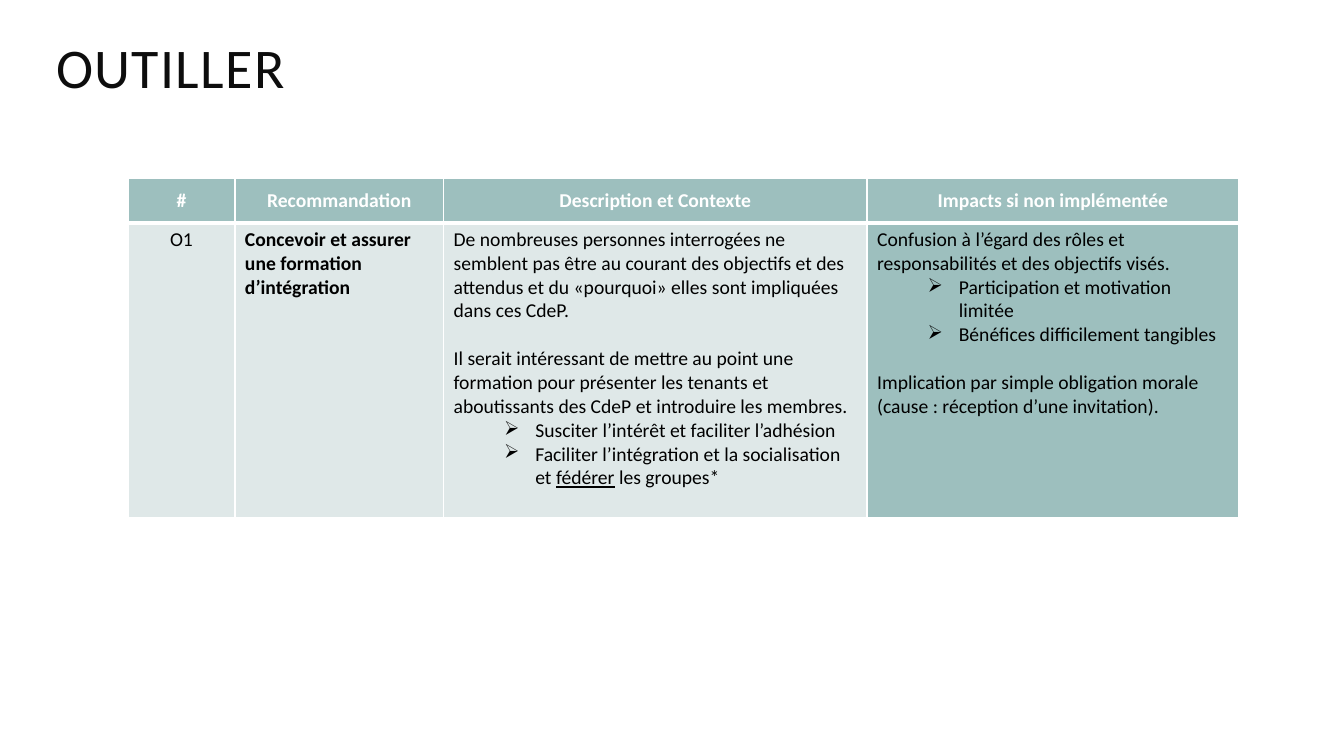
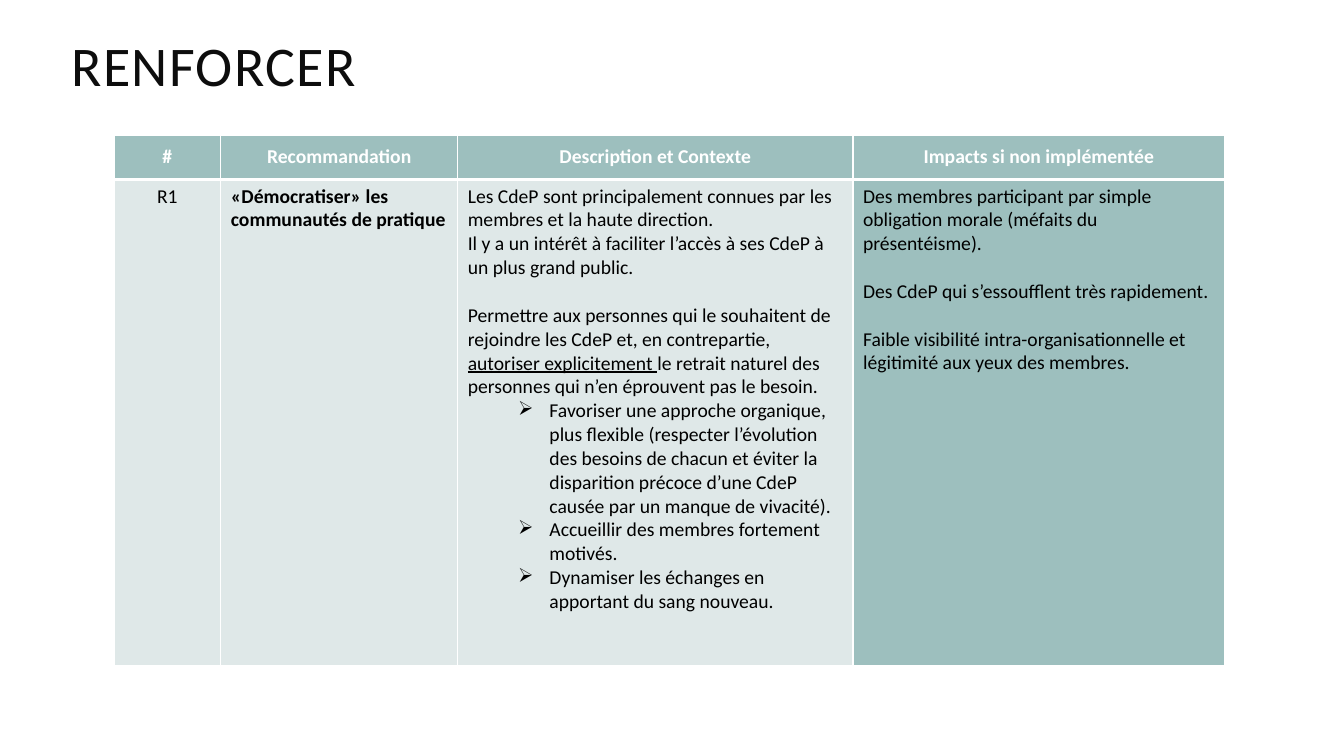
from dataclasses import dataclass

from lxml import etree
from pptx import Presentation
from pptx import util as u
from pptx.dml.color import RGBColor
from pptx.enum import text
from pptx.oxml import ns


@dataclass(frozen=True)
class Theme:
    font: str = "Calibri"
    title_size: int = 40
    body_size: int = 14
    gap: int = 17
    title: str = "0D0D0D"
    body: str = "000000"
    light: str = "FFFFFF"
    accent: str = "9DBFBE"
    tint: str = "DFE8E8"


@dataclass(frozen=True)
class Para:
    """Paragraph text; words between underscores are underlined."""
    text: str
    bullet: bool = False
    gap: bool = False


HEADERS = ("#", "Recommandation", "Description et Contexte",
           "Impacts si non implémentée")
HEADER_HEIGHT = 0.44
THIN, THICK = 1, 3


class Deck:
    def __init__(self, theme):
        self.theme = theme
        self.prs = Presentation()
        self.prs.slide_width = u.Inches(13.33)
        self.prs.slide_height = u.Inches(7.5)
        self.s = None

    def add_slide(self):
        self.s = self.prs.slides.add_slide(self.prs.slide_layouts[6])

    def run(self, p, content, color, **formats):
        r = p.add_run()
        r.text = content
        formats = {"name": self.theme.font,
                   "size": u.Pt(self.theme.body_size), **formats}
        for name, value in formats.items():
            setattr(r.font, name, value)
        r.font.color.rgb = RGBColor.from_string(color)
        return r

    def title(self, content, left, height):
        sp = self.s.shapes.add_textbox(u.Inches(left), 0, u.Inches(10.63),
                                       u.Inches(height))
        tf = sp.text_frame
        tf.word_wrap = True
        tf.vertical_anchor = text.MSO_ANCHOR.MIDDLE
        p = tf.paragraphs[0]
        p.line_spacing = 0.8
        r = self.run(p, content, self.theme.title,
                     size=u.Pt(self.theme.title_size))
        r.font._element.set("spc", "100")

    def bullet(self, p):
        pPr = p._p.get_or_add_pPr()
        pPr.set("marL", str(u.Inches(0.81)))
        pPr.set("indent", str(u.Inches(-0.31)))
        etree.SubElement(pPr, ns.qn("a:buChar"), char="➢")

    def borders(self, cell, top, bottom):
        tcPr = cell._tc.get_or_add_tcPr()
        widths = {"L": THIN, "R": THIN, "T": top, "B": bottom}
        for side, width in widths.items():
            ln = etree.SubElement(tcPr, ns.qn(f"a:ln{side}"),
                                  w=str(u.Pt(width)))
            fill = etree.SubElement(ln, ns.qn("a:solidFill"))
            etree.SubElement(fill, ns.qn("a:srgbClr"), val=self.theme.light)

    def cell(self, cell, paras, fill, color, top=THIN, bottom=THIN,
             bold=False, centered=False):
        self.borders(cell, top, bottom)
        cell.fill.solid()
        cell.fill.fore_color.rgb = RGBColor.from_string(fill)
        tf = cell.text_frame
        for i, para in enumerate(paras):
            p = tf.paragraphs[0] if i == 0 else tf.add_paragraph()
            if centered:
                p.alignment = text.PP_ALIGN.CENTER
            if para.gap:
                p.space_before = u.Pt(self.theme.gap)
            if para.bullet:
                self.bullet(p)
            for j, part in enumerate(para.text.split("_")):
                if part:
                    self.run(p, part, color, bold=bold, underline=j % 2 == 1)

    def table(self, left, top, widths, body_height, number, name,
              description, impacts):
        th = self.theme
        frame = self.s.shapes.add_table(
            2, len(HEADERS), u.Inches(left), u.Inches(top),
            u.Inches(sum(widths)), u.Inches(HEADER_HEIGHT + body_height))
        table = frame.table
        table.horz_banding = False
        for row, height in zip(table.rows, (HEADER_HEIGHT, body_height)):
            row.height = u.Inches(height)
        body = ([Para(number)], [Para(name)], description, impacts)
        for i, (width, header, paras) in enumerate(zip(widths, HEADERS, body)):
            table.columns[i].width = u.Inches(width)
            head = table.cell(0, i)
            head.vertical_anchor = text.MSO_ANCHOR.MIDDLE
            self.cell(head, [Para(header)], th.accent, th.light,
                      bottom=THICK, bold=True, centered=True)
            self.cell(table.cell(1, i), paras,
                      th.accent if i == len(HEADERS) - 1 else th.tint,
                      th.body, top=THICK, bold=i == 1, centered=i == 0)


def main():
    deck = Deck(Theme())

    deck.add_slide()
    deck.table(
        1.27, 1.77, (1.06, 2.07, 4.2, 3.69), 2.93, "O1",
        "Concevoir et assurer une formation d’intégration",
        [Para("De nombreuses personnes interrogées ne semblent pas être au "
              "courant des objectifs et des attendus et du «pourquoi» elles "
              "sont impliquées dans ces CdeP."),
         Para("Il serait intéressant de mettre au point une formation pour "
              "présenter les tenants et aboutissants des CdeP et introduire "
              "les membres.", gap=True),
         Para("Susciter l’intérêt et faciliter l’adhésion", bullet=True),
         Para("Faciliter l’intégration et la socialisation et _fédérer_ les "
              "groupes*", bullet=True)],
        [Para("Confusion à l’égard des rôles et responsabilités et des "
              "objectifs visés."),
         Para("Participation et motivation limitée", bullet=True),
         Para("Bénéfices difficilement tangibles", bullet=True),
         Para("Implication par simple obligation morale (cause : réception "
              "d’une invitation).", gap=True)])
    deck.title("OUTILLER", 0.46, 1.44)

    deck.add_slide()
    deck.table(
        1.13, 1.34, (1.06, 2.35, 3.92, 3.69), 4.82, "R1",
        "«Démocratiser» les communautés de pratique",
        [Para("Les CdeP sont principalement connues par les membres et la "
              "haute direction."),
         Para("Il y a un intérêt à faciliter l’accès à ses CdeP à un plus "
              "grand public."),
         Para("Permettre aux personnes qui le souhaitent de rejoindre les "
              "CdeP et, en contrepartie, _autoriser explicitement _le retrait "
              "naturel des personnes qui n’en éprouvent pas le besoin.",
              gap=True),
         Para("Favoriser une approche organique, plus flexible (respecter "
              "l’évolution des besoins de chacun et éviter la disparition "
              "précoce d’une CdeP causée par un manque de vivacité).",
              bullet=True),
         Para("Accueillir des membres fortement motivés.", bullet=True),
         Para("Dynamiser les échanges en apportant du sang nouveau.",
              bullet=True)],
        [Para("Des membres participant par simple obligation morale (méfaits "
              "du présentéisme)."),
         Para("Des CdeP qui s’essoufflent très rapidement.", gap=True),
         Para("Faible visibilité intra-organisationnelle et légitimité aux "
              "yeux des membres.", gap=True)])
    deck.title("RENFORCER", 0.61, 1.4)

    deck.prs.save("out.pptx")


if __name__ == "__main__":
    main()
